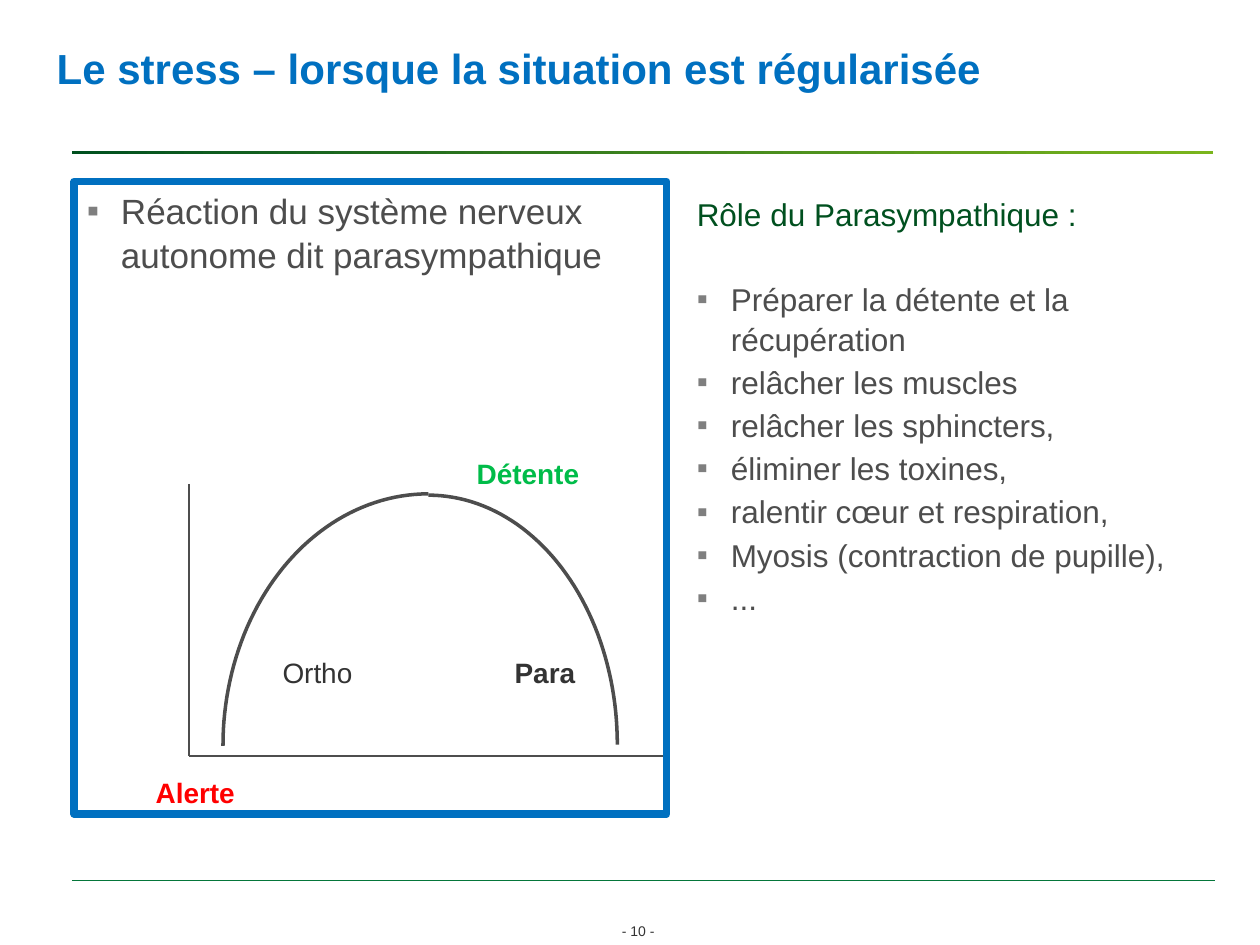
from dataclasses import dataclass
from math import cos, pi, sin

from lxml.etree import SubElement
from pptx import Presentation
from pptx.dml.color import RGBColor
from pptx.enum.shapes import MSO_CONNECTOR, MSO_SHAPE
from pptx.enum.text import MSO_ANCHOR, MSO_AUTO_SIZE, PP_ALIGN
from pptx.oxml.ns import qn
from pptx.util import Inches, Pt


@dataclass(frozen=True)
class Theme:
    """Hold the colours, type sizes and font of the slide."""
    blue: str = "0070C0"
    dark: str = "00501F"
    lime: str = "7AB51D"
    rule: str = "04763A"
    gray: str = "4D4D4D"
    mark: str = "7F7F7F"
    ink: str = "333333"
    red: str = "FF0000"
    green: str = "00BC49"
    font: str = "Arial"
    title: int = 24
    lead: int = 20
    list: int = 18
    label: int = 16
    foot: int = 8


T = Theme()
WIDE, HIGH = Inches(10), Inches(7.5)
COLS, ROWS = 100, 75
ROLES = (
    "Préparer la détente et la récupération",
    "relâcher les muscles",
    "relâcher les sphincters,",
    "éliminer les toxines,",
    "ralentir cœur et respiration,",
    "Myosis (contraction de pupille),",
    "...",
)
LABELS = (
    ("Alerte", 11.3, 61, 8.4, T.red, True),
    ("Ortho", 21.4, 51.5, 7.6, T.ink, False),
    ("Détente", 36.8, 35.7, 10.2, T.green, True),
    ("Para", 39.8, 51.5, 6.9, T.ink, True),
)


def col(n):
    """Return the length of n grid columns."""
    return round(WIDE * n / COLS)


def row(n):
    """Return the length of n grid rows."""
    return round(HIGH * n / ROWS)


def rgb(code):
    """Return a colour from its hex code."""
    return RGBColor.from_string(code)


def put(item, **vals):
    """Set each named value on an object."""
    for name, val in vals.items():
        setattr(item, name, val)


def place(shape, x, y, w, h):
    """Move and size a shape on the grid."""
    put(shape, left=col(x), top=row(y), width=col(w), height=row(h))


def write(para, text, size, color, bold=False, **form):
    """Fill a paragraph with one styled run."""
    run = para.add_run()
    run.text = text
    put(run.font, name=T.font, size=Pt(size), bold=bold)
    run.font.color.rgb = rgb(color)
    put(para, **form)


def bullet(para, on=True):
    """Give a paragraph a square bullet or none."""
    props = para._p.get_or_add_pPr()
    dent = Inches(0.27) if on else 0
    props.set("marL", str(dent))
    props.set("indent", str(-dent))
    if on:
        tint = SubElement(props, qn("a:buClr"))
        SubElement(tint, qn("a:srgbClr"), val=T.mark)
        SubElement(props, qn("a:buFont"), typeface=T.font)
        SubElement(props, qn("a:buChar"), char="▪")
    else:
        SubElement(props, qn("a:buNone"))


def items(shape, rows):
    """Write a list of text, size, colour, gap and bullet flag."""
    frame = shape.text_frame
    put(frame, word_wrap=True, auto_size=MSO_AUTO_SIZE.NONE)
    for i, (text, size, color, gap, mark) in enumerate(rows):
        para = frame.add_paragraph() if i else frame.paragraphs[0]
        write(para, text, size, color, space_before=Pt(gap), line_spacing=1.05)
        bullet(para, mark)


def line(slide, x1, y1, x2, y2, color, width):
    """Draw a straight line without shadow."""
    link = slide.shapes.add_connector(
        MSO_CONNECTOR.STRAIGHT, col(x1), row(y1), col(x2), row(y2))
    link.line.color.rgb = rgb(color)
    link.line.width = Pt(width)
    SubElement(link._element.spPr, qn("a:effectLst"))


def arc(slide, x, y, rx, ry, start, steps=48):
    """Draw a quarter of an ellipse from a start angle."""
    turns = [start + pi / 2 * i / steps for i in range(steps + 1)]
    dots = [(col(x + rx * cos(t)), row(y - ry * sin(t))) for t in turns]
    pen = slide.shapes.build_freeform(*dots[0])
    pen.add_line_segments(dots[1:], close=False)
    curve = pen.convert_to_shape()
    curve.shadow.inherit = False
    curve.fill.background()
    curve.line.color.rgb = rgb(T.gray)
    curve.line.width = Pt(2)


def label(slide, text, x, y, w, h, size, color, bold=False):
    """Add a short centred text."""
    box = slide.shapes.add_textbox(col(x), row(y), col(w), row(h))
    frame = box.text_frame
    put(frame, word_wrap=False, vertical_anchor=MSO_ANCHOR.MIDDLE)
    write(frame.paragraphs[0], text, size, color, bold,
          alignment=PP_ALIGN.CENTER)


def band(slide, x, y, w, h):
    """Draw the gradient rule under the title."""
    bar = slide.shapes.add_shape(
        MSO_SHAPE.RECTANGLE, col(x), row(y), col(w), row(h))
    bar.shadow.inherit = False
    bar.line.fill.background()
    bar.fill.gradient()
    bar.fill.gradient_angle = 0
    for stop, color, spot in zip(
            bar.fill.gradient_stops, (T.dark, T.lime), (0, 1)):
        stop.color.rgb = rgb(color)
        stop.position = spot


def graph(slide):
    """Draw the axes, the two arcs and their labels."""
    line(slide, 15, 38.4, 15, 60, T.gray, 1)
    line(slide, 15, 60, 52.6, 60, T.gray, 1)
    arc(slide, 34, 59.2, 16.3, 20, pi / 2)
    arc(slide, 34, 59.1, 15, 19.8, 0)
    for text, x, y, w, color, bold in LABELS:
        label(slide, text, x, y, w, 3.7, T.label, color, bold)


def main():
    """Build and save the slide."""
    deck = Presentation()
    put(deck, slide_width=WIDE, slide_height=HIGH)
    slide = deck.slides.add_slide(deck.slide_layouts[3])
    title, left, right = slide.placeholders

    place(title, 3.5, 2.1, 92.9, 7.1)
    put(title.text_frame, word_wrap=True, auto_size=MSO_AUTO_SIZE.NONE,
        vertical_anchor=MSO_ANCHOR.MIDDLE)
    write(title.text_frame.paragraphs[0],
          "Le stress – lorsque la situation est régularisée",
          T.title, T.blue, True, alignment=PP_ALIGN.LEFT, line_spacing=0.9)

    place(left, 5.9, 14.4, 47, 50.2)
    left.line.color.rgb = rgb(T.blue)
    left.line.width = Pt(4.5)
    items(left, [("Réaction du système nerveux autonome dit parasympathique",
                  T.lead, T.gray, 2, True)])

    place(right, 54.3, 14.8, 40.7, 52.3)
    head = ("Rôle du Parasympathique :", T.list, T.dark, 2, False)
    items(right, [head] + [(text, T.list, T.gray, 2 if i else 26, True)
                           for i, text in enumerate(ROLES)])

    band(slide, 5.7, 12, 90.6, 0.2)
    line(slide, 5.7, 69.9, 96.4, 69.9, T.rule, 0.75)
    graph(slide)
    label(slide, "- 10 -", 47.4, 72.7, 6.5, 2.3, T.foot, T.ink)
    deck.save("out.pptx")


if __name__ == "__main__":
    main()
